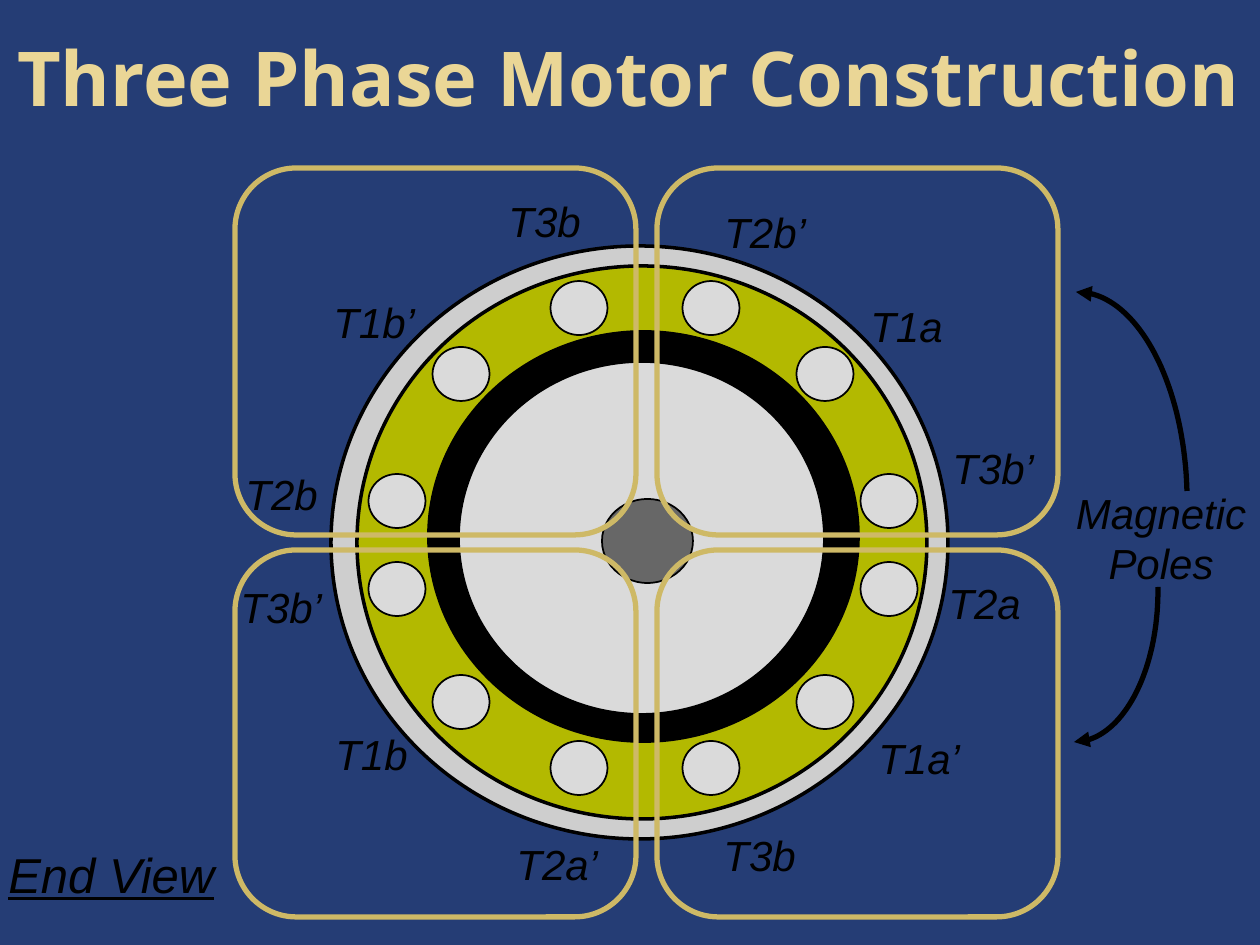
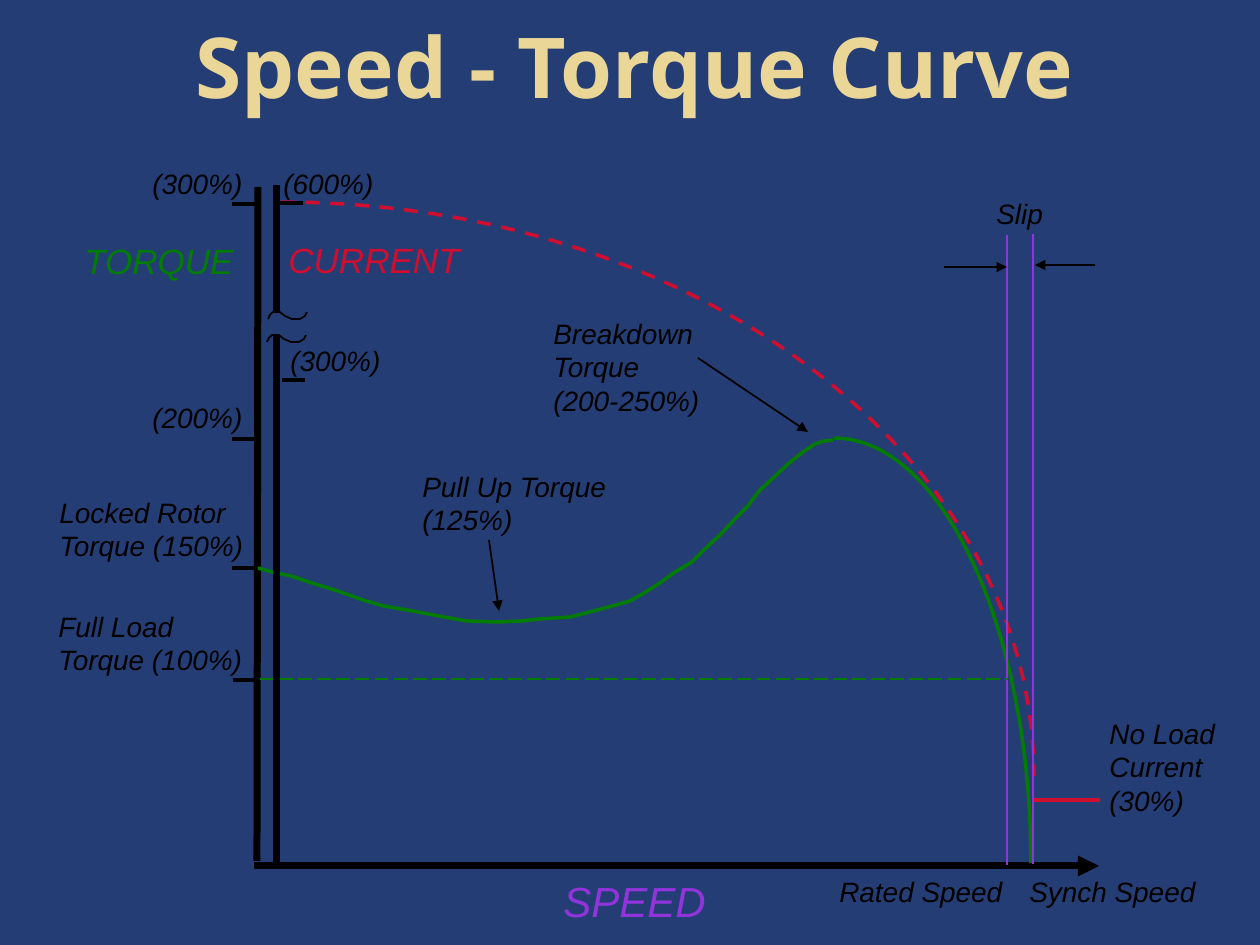
from itertools import product

from pptx import Presentation
from pptx import util as u
from pptx.dml.color import RGBColor
from pptx.enum import dml, shapes, text
from pptx.oxml.ns import qn
from lxml import etree

EMU_PER_PX = 914400 / 126
SLIDE_SIZE = 1260, 945
TITLE_FONT, BODY_FONT = "Noto Sans", "Arial"
COLOURS = {
    "background": "253D75", "title": "EAD696", "black": "000000",
    "frame": "CECECE", "stator": "B3B900", "rotor": "DADADA",
    "shaft": "676767", "pole": "CEB966",
    "torque": "037C03", "current": "CF0E30", "speed": "9234DB",
}

# Motor: left, top, width, height, fill, line width
RINGS = [
    (331, 246, 617, 593, "frame", 2),
    (357, 266, 570, 553, "stator", 2),
    (428, 331, 431, 411, "black", 1),
    (459, 362, 365, 352, "rotor", 1),
    (602, 499, 91, 84, "shaft", 1),
]
SLOT_SIZE = 57, 54
# Each group of four slots mirrors about its centre: centre x, y, offset x, y
SLOT_GROUPS = [(645, 538, 66, 230), (643, 538, 182, 164), (643, 545, 246, 44)]
POLE_SIZE = 401, 367
POLE_LEFTS, POLE_TOPS = (235, 657), (168, 550)
POLE_ROUNDING = 0.167
# Labels: text, left, top, width, height
WINDING_LABELS = [
    ("T1a", 858, 294, 100, 63), ("T2a", 936, 571, 102, 63),
    ("T2a’", 504, 832, 134, 63), ("T1a’", 866, 726, 136, 63),
    ("T1b", 323, 722, 125, 63), ("T2b", 233, 462, 120, 63),
    ("T2b’", 712, 200, 136, 63), ("T3b", 711, 823, 134, 63),
    ("T1b’", 321, 290, 136, 63), ("T3b’", 940, 436, 134, 63),
    ("T3b’", 228, 575, 134, 63), ("T3b", 496, 189, 134, 63),
]
# Bézier control points, arrowhead at the last one
POLE_ARROWS = [
    [(1187, 491), (1184, 380), (1135, 291), (1076, 292)],
    [(1158, 587), (1159, 673), (1121, 742), (1074, 742)],
]

# Graph lines: start, end, colour, width, options
AXES = [
    ((258, 187), (257, 861), "black", 4, {}),
    ((254, 866), (1099, 866), "black", 4, {"arrow": True}),
]
GRAPH_LINES = [
    ((1033, 864), (1033, 234), "speed", 1, {}),
    ((1007, 865), (1007, 235), "speed", 1, {}),
    ((260, 679), (1008, 679), "torque", 1, {"dash": dml.MSO_LINE.LONG_DASH}),
    ((1034, 800), (1100, 800), "current", 2, {}),
    ((489, 540), (499, 611), "black", 1, {"arrow": True}),
    ((698, 358), (808, 432), "black", 1, {"arrow": True}),
    ((944, 267), (1007, 267), "black", 1, {"arrow": True}),
    ((1095, 265), (1035, 265), "black", 1, {"arrow": True}),
    ((277, 335), (277, 864), "black", 4, {}),
    ((277, 185), (277, 312), "black", 4, {}),
]
TICK_LENGTH = 23
TICKS = [(232, 204), (232, 439), (232, 568), (233, 680), (280, 203), (282, 380)]
TORQUE_RISE = [
    (258, 568), (272, 572), (291, 576), (312, 583), (338, 591), (363, 600),
    (384, 606), (413, 611), (444, 617), (467, 621), (496, 622), (522, 621),
    (539, 619), (570, 617), (590, 612), (612, 606), (630, 601), (644, 593),
    (660, 583), (675, 572), (692, 562), (707, 547), (722, 533), (736, 518),
    (747, 507), (759, 491), (772, 479), (788, 464), (803, 452), (815, 444),
    (824, 441), (833, 440),
]
TORQUE_FALL = [(834, 438), (942, 438), (1031, 629), (1031, 863)]
CURRENT_FALL = [(281, 202), (697, 202), (1034, 459), (1034, 776)]
AXIS_BREAK = [
    (268, 319), (270, 315), (273, 312), (280, 312), (285, 316),
    (292, 319), (300, 319), (305, 316), (307, 312),
]
AXIS_BREAK_SHIFT = -1, 23
GRAPH_LABELS = [
    ("(600%)", 271, 160, 118, 45),
    ("Locked Rotor Torque (150%)", 47, 489, 213, 130),
    ("Full Load Torque (100%)", 46, 603, 213, 130),
    ("Pull Up Torque (125%)", 410, 463, 213, 130),
    ("Breakdown Torque\v(200-250%)", 541, 310, 213, 164),
    ("Rated Speed", 827, 868, 213, 45),
    ("Synch Speed", 1017, 868, 213, 45),
    ("No Load Current (30%)", 1097, 710, 156, 113),
    ("Slip", 984, 190, 81, 45),
    ("(300%)", 278, 337, 118, 45),
    ("(300%)", 140, 160, 118, 45),
    ("(200%)", 140, 394, 118, 45),
]
# Quantity labels add a size and a colour
QUANTITY_LABELS = [
    ("SPEED", 551, 869, 175, 63, 24, "speed"),
    ("TORQUE", 72, 233, 227, 54, 20, "torque"),
    ("CURRENT", 276, 232, 251, 54, 20, "current"),
]


def px(*lengths):
    return [u.Emu(round(length * EMU_PER_PX)) for length in lengths]


def colour(name):
    return RGBColor.from_string(COLOURS[name])


def style_font(font, colour_name, **values):
    for name, value in values.items():
        setattr(font, name, value)
    font.color.rgb = colour(colour_name)


def style_line(shape, colour_name, width, dash=None, arrow=False):
    shape.line.color.rgb = colour(colour_name)
    shape.line.width = u.Pt(width)
    if dash:
        shape.line.dash_style = dash
    if arrow:
        line = shape._element.spPr.find(qn("a:ln"))
        etree.SubElement(line, qn("a:tailEnd"), type="triangle")


def add_titled_slide(presentation, title, left, top, width, height, size):
    slide = presentation.slides.add_slide(presentation.slide_layouts[5])
    shape = slide.shapes.title
    shape.left, shape.top, shape.width, shape.height = px(left, top, width, height)
    frame = shape.text_frame
    settings = {
        "text": title, "auto_size": text.MSO_AUTO_SIZE.NONE, "word_wrap": True,
        "vertical_anchor": text.MSO_ANCHOR.MIDDLE,
        "margin_left": 0, "margin_right": 0,
    }
    for name, value in settings.items():
        setattr(frame, name, value)
    paragraph = frame.paragraphs[0]
    paragraph.alignment = text.PP_ALIGN.CENTER
    style_font(paragraph.runs[0].font, "title", name=TITLE_FONT, size=u.Pt(size), bold=True)
    return slide


def add_label(slide, words, left, top, width, height, size=16, colour_name="black",
              alignment=text.PP_ALIGN.LEFT, underline=None):
    box = slide.shapes.add_textbox(*px(left, top, width, height))
    frame = box.text_frame
    frame.word_wrap = True
    frame.text = words
    for paragraph in frame.paragraphs:
        paragraph.alignment = alignment
        for run in paragraph.runs:
            style_font(run.font, colour_name, name=BODY_FONT,
                       size=u.Pt(size), italic=True, underline=underline)


def add_outlined(slide, kind, left, top, width, height, fill, line, line_width):
    shape = slide.shapes.add_shape(kind, *px(left, top, width, height))
    shape.shadow.inherit = False
    if fill:
        shape.fill.solid()
        shape.fill.fore_color.rgb = colour(fill)
    else:
        shape.fill.background()
    style_line(shape, line, line_width)
    return shape


def add_line(slide, start, end, colour_name, width, options):
    connector = slide.shapes.add_connector(
        shapes.MSO_CONNECTOR.STRAIGHT, *px(*start, *end))
    style_line(connector, colour_name, width, **options)
    etree.SubElement(connector._element.spPr, qn("a:effectLst"))


def bezier(controls, steps=40):
    """Points along a cubic Bézier curve."""
    points = []
    for step in range(steps + 1):
        t = step / steps
        weights = (1 - t) ** 3, 3 * t * (1 - t) ** 2, 3 * t * t * (1 - t), t ** 3
        points.append(tuple(sum(w * p[axis] for w, p in zip(weights, controls))
                            for axis in (0, 1)))
    return points


def add_curve(slide, points, colour_name, width, **options):
    start, *others = [px(*point) for point in points]
    builder = slide.shapes.build_freeform(*start)
    builder.add_line_segments(others, close=False)
    curve = builder.convert_to_shape()
    curve.shadow.inherit = False
    curve.fill.background()
    style_line(curve, colour_name, width, **options)


def build_motor_slide(presentation):
    slide = add_titled_slide(
        presentation, "Three Phase Motor Construction", 2, -4, 1252, 160, 43.2)
    oval = shapes.MSO_SHAPE.OVAL
    add_label(slide, "End View", -4, 838, 330, 71, 28, underline=True)
    for *place, fill, line_width in RINGS:
        add_outlined(slide, oval, *place, fill, "black", line_width)

    slot_width, slot_height = SLOT_SIZE
    for (x, y, dx, dy), x_sign, y_sign in product(SLOT_GROUPS, (-1, 1), (-1, 1)):
        left = x + x_sign * dx - slot_width / 2
        top = y + y_sign * dy - slot_height / 2
        add_outlined(slide, oval, left, top, *SLOT_SIZE, "rotor", "black", 1)

    add_label(slide, "Magnetic\nPoles", 1057, 481, 208, 113, 24,
              alignment=text.PP_ALIGN.CENTER)
    for label in WINDING_LABELS:
        add_label(slide, *label, 24)
    for left, top in product(POLE_LEFTS, POLE_TOPS):
        pole = add_outlined(slide, shapes.MSO_SHAPE.ROUNDED_RECTANGLE,
                            left, top, *POLE_SIZE, None, "pole", 3)
        pole.adjustments[0] = POLE_ROUNDING
    for controls in POLE_ARROWS:
        add_curve(slide, bezier(controls), "black", 3, arrow=True)


def build_curve_slide(presentation):
    slide = add_titled_slide(
        presentation, "Speed - Torque Curve", 99, -15, 1071, 160, 48)
    for axis in AXES:
        add_line(slide, *axis)
    add_curve(slide, bezier(TORQUE_FALL), "torque", 2)
    add_curve(slide, TORQUE_RISE, "torque", 2)
    add_curve(slide, bezier(CURRENT_FALL), "current", 2, dash=dml.MSO_LINE.DASH)
    for line in GRAPH_LINES:
        add_line(slide, *line)
    for left, y in TICKS:
        add_line(slide, (left, y), (left + TICK_LENGTH, y), "black", 2, {})
    for dx, dy in ((0, 0), AXIS_BREAK_SHIFT):
        add_curve(slide, [(x + dx, y + dy) for x, y in AXIS_BREAK], "black", 1)
    for label in GRAPH_LABELS + QUANTITY_LABELS:
        add_label(slide, *label)


def main():
    presentation = Presentation()
    presentation.slide_width, presentation.slide_height = px(*SLIDE_SIZE)
    background = presentation.slide_master.background.fill
    background.solid()
    background.fore_color.rgb = colour("background")
    build_motor_slide(presentation)
    build_curve_slide(presentation)
    presentation.save("out.pptx")


if __name__ == "__main__":
    main()
